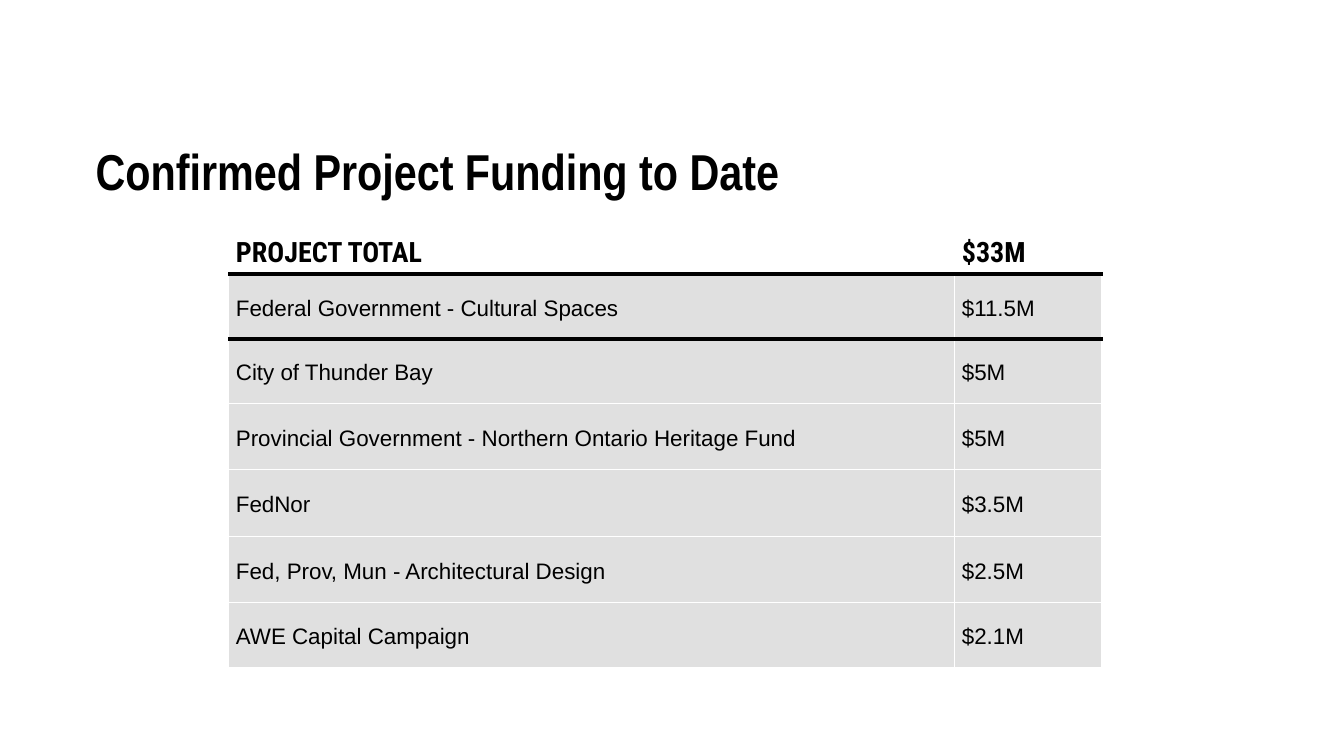
from dataclasses import dataclass

from pptx import Presentation
from pptx.dml.color import RGBColor
from pptx.enum.text import MSO_ANCHOR
from pptx.oxml import parse_xml
from pptx.oxml.ns import nsdecls
from pptx.util import Emu, Pt

PX = 9144
COLORS = {"text": "000000", "paper": "FFFFFF", "band": "E0E0E0", "rule": "000000"}
COLUMN_WIDTHS = (720, 146)
CELL_INSET = 7
AMOUNT_INDENT = 52


@dataclass(frozen=True)
class TextStyle:
    font: str
    size: int
    bold: bool
    spacing: float


@dataclass(frozen=True)
class FundingRow:
    source: str
    amount: str
    height: int
    heavy_top: bool = False
    heavy_bottom: bool = False
    header: bool = False


TITLE = TextStyle("Arial Narrow", 36, True, 0.9)
HEADER = TextStyle("Roboto Condensed", 20, True, 1.15)
BODY = TextStyle("Arial", 16, False, 1.15)

ROWS = (
    FundingRow("PROJECT TOTAL", "$33M", 48, heavy_bottom=True, header=True),
    FundingRow("Federal Government - Cultural Spaces", "$11.5M", 64,
               heavy_top=True, heavy_bottom=True),
    FundingRow("City of Thunder Bay", "$5M", 64, heavy_top=True),
    FundingRow("Provincial Government - Northern Ontario Heritage Fund", "$5M", 66),
    FundingRow("FedNor", "$3.5M", 66),
    FundingRow("Fed, Prov, Mun - Architectural Design", "$2.5M", 66),
    FundingRow("AWE Capital Campaign", "$2.1M", 64),
)


def px(length: int) -> Emu:
    return Emu(length * PX)


def write(frame, text: str, style: TextStyle):
    para = frame.paragraphs[0]
    para.text = text
    para.line_spacing = style.spacing
    para.font.name = style.font
    para.font.size = Pt(style.size)
    para.font.bold = style.bold
    para.font.color.rgb = RGBColor.from_string(COLORS["text"])
    return para


def add_border(cell, side: str, heavy: bool) -> None:
    width = Pt(3 if heavy else 1)
    color = COLORS["rule" if heavy else "paper"]
    cell._tc.get_or_add_tcPr().append(parse_xml(
        f'<a:ln{side} {nsdecls("a")} w="{width}"><a:solidFill>'
        f'<a:srgbClr val="{color}"/></a:solidFill></a:ln{side}>'))


def fill_cell(cell, text: str, row: FundingRow):
    cell.margin_left = cell.margin_right = px(CELL_INSET)
    cell.margin_top = cell.margin_bottom = 0
    cell.vertical_anchor = MSO_ANCHOR.MIDDLE
    borders = {"L": False, "R": False, "T": row.heavy_top, "B": row.heavy_bottom}
    for side, heavy in borders.items():
        add_border(cell, side, heavy)
    cell.fill.solid()
    cell.fill.fore_color.rgb = RGBColor.from_string(
        COLORS["paper" if row.header else "band"])
    return write(cell.text_frame, text, HEADER if row.header else BODY)


def add_title(page, text: str) -> None:
    box = page.shapes.add_textbox(px(85), px(141), px(1150), px(127))
    box.text_frame.word_wrap = True
    write(box.text_frame, text, TITLE)


def add_funding_table(page) -> None:
    height = sum(row.height for row in ROWS)
    table = page.shapes.add_table(
        len(ROWS), len(COLUMN_WIDTHS),
        px(227), px(224), px(sum(COLUMN_WIDTHS)), px(height)).table
    table.first_row = table.horz_banding = False
    for column, width in zip(table.columns, COLUMN_WIDTHS):
        column.width = px(width)
    for index, row in enumerate(ROWS):
        table.rows[index].height = px(row.height)
        fill_cell(table.cell(index, 0), row.source, row)
        amount = fill_cell(table.cell(index, 1), row.amount, row)
        if row.header:
            properties = amount._p.get_or_add_pPr()
            properties.set("marL", str(px(AMOUNT_INDENT)))
            properties.set("indent", str(px(-AMOUNT_INDENT)))


def main() -> None:
    deck = Presentation()
    deck.slide_width, deck.slide_height = px(1333), px(750)
    page = deck.slides.add_slide(deck.slide_layouts[6])
    add_title(page, "Confirmed Project Funding to Date")
    add_funding_table(page)
    deck.save("out.pptx")


if __name__ == "__main__":
    main()
